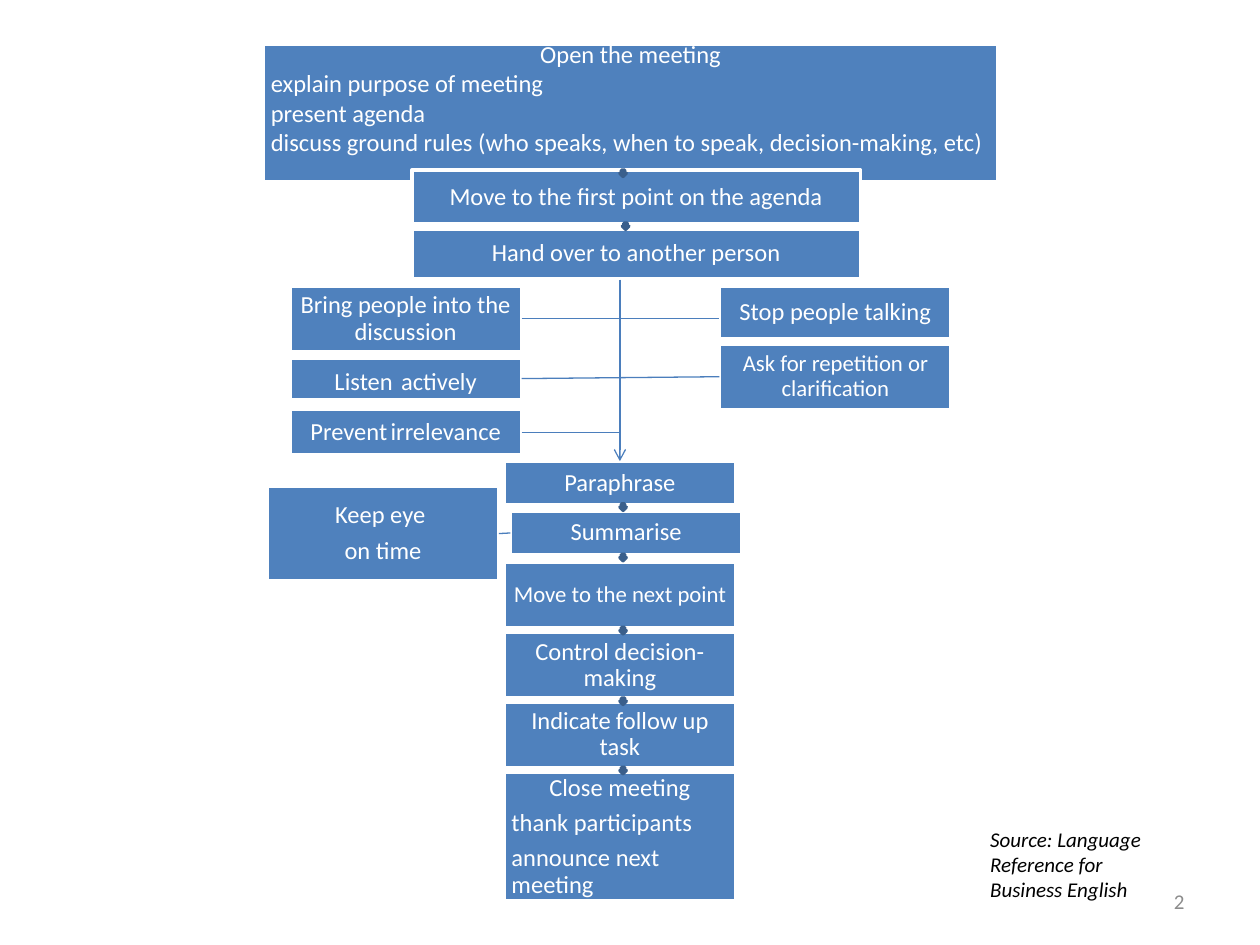
"""Build a slide with the flow of a business meeting."""
from lxml.etree import SubElement
from pptx import Presentation
from pptx.dml.color import RGBColor
from pptx.enum.shapes import MSO_CONNECTOR, MSO_SHAPE
from pptx.enum.text import MSO_ANCHOR, PP_ALIGN
from pptx.oxml.ns import qn
from pptx.util import Inches, Pt

BLUE = RGBColor(0x4F, 0x81, 0xBD)
LINK = RGBColor(0x4B, 0x7E, 0xBC)
EDGE = RGBColor(0x3A, 0x5F, 0x8C)
WHITE = RGBColor(0xFF, 0xFF, 0xFF)
BLACK = RGBColor(0, 0, 0)
GREY = RGBColor(0x8C, 0x8C, 0x8C)

COLS = {
    "top": (2.09, 5.83), "wide": (3.27, 3.56), "left": (2.3, 1.84),
    "right": (5.71, 1.84), "time": (2.12, 1.84), "mid": (4, 1.84),
    "sum": (4.05, 1.84),
}
BOXES = [
    ("open", "top", 0.35, 1.09, [
        "Open the meeting", "explain purpose of meeting", "present agenda",
        "discuss ground rules (who speaks, when to speak, decision-making, etc)"]),
    ("bring", "left", 2.27, 0.52, ["Bring people into the discussion"]),
    ("listen", "left", 2.84, 0.33, ["Listen actively"]),
    ("first", "wide", 1.35, 0.43, ["Move to the first point on the agenda"]),
    ("control", "mid", 5.02, 0.52, ["Control decision-making"]),
    ("time", "time", 3.86, 0.75, ["Keep eye ", "on time"]),
    ("sum", "sum", 4.06, 0.34, ["Summarise"]),
    ("ask", "right", 2.73, 0.52, ["Ask for repetition or clarification"]),
    ("prevent", "left", 3.25, 0.36, ["Prevent irrelevance"]),
    ("next", "mid", 4.46, 0.52, ["Move to the next point"]),
    ("para", "mid", 3.66, 0.35, ["Paraphrase"]),
    ("close", "mid", 6.13, 1.02, [
        "Close meeting", "thank participants", "announce next meeting"]),
    ("follow", "mid", 5.57, 0.52, ["Indicate follow up task"]),
    ("stop", "right", 2.27, 0.42, ["Stop people talking"]),
    ("hand", "wide", 1.82, 0.39, ["Hand over to another person"]),
]
SIZES = {"ask": 13, "next": 13}
GAPS = {"listen": 21, "prevent": 8, "follow": 13}
LISTS = ("open", "close")
LINKS = [
    ("bring", None, (4.14, 2.53), (5.71, 2.53)),
    ("listen", "ask", (4.14, 3.01), (5.71, 2.99)),
    ("prevent", None, (4.14, 3.43), (4.92, 3.43)),
    ("time", "sum", (3.96, 4.23), (4.05, 4.23)),
]
MARKS = [(4.92, 4), (4.92, 4.4), (4.92, 4.98), (4.92, 5.54),
         (4.92, 6.09), (4.92, 1.35), (4.94, 1.77)]


def style(run, size, color):
    run.font.name = "Calibri"
    run.font.size = Pt(size)
    run.font.color.rgb = color


def shape(kind, area, line):
    item = slide.shapes.add_shape(kind, *map(Inches, area))
    item.shadow.inherit = False
    item.fill.solid()
    item.fill.fore_color.rgb = BLUE
    item.line.color.rgb = line
    item.line.width = Pt(2)
    return item


def box(name, col, top, high, lines):
    left, wide = COLS[col]
    item = shape(MSO_SHAPE.RECTANGLE, (left, top, wide, high), WHITE)
    size = SIZES.get(name, 14)
    frame = item.text_frame
    frame.word_wrap = True
    frame.vertical_anchor = MSO_ANCHOR.MIDDLE
    frame.margin_left = frame.margin_right = Inches(0.06)
    frame.margin_top = frame.margin_bottom = Inches(0.06)
    if name == "open":
        frame.margin_bottom = Inches(0.3)
    frame.text = "\n".join(lines)
    for row, para in enumerate(frame.paragraphs):
        listed = name in LISTS and row > 0
        para.alignment = PP_ALIGN.LEFT if listed else PP_ALIGN.CENTER
        if name != "open":
            para.line_spacing = 0.9
            para.space_after = Pt(5)
        if name in GAPS:
            words = para.text.split()
            para.text = words[0]
            for word in words[1:]:
                para.add_run().text = " "
                para.add_run().text = word
        for run in para.runs:
            style(run, size if run.text.strip() else GAPS[name], WHITE)
    return item


def link(start, end):
    item = slide.shapes.add_connector(
        MSO_CONNECTOR.STRAIGHT, *map(Inches, start + end))
    item.line.color.rgb = LINK
    item.line.width = Pt(0.75)
    SubElement(item._element.spPr, qn("a:effectLst"))
    return item


def label(text, area, size, color):
    frame = slide.shapes.add_textbox(*map(Inches, area)).text_frame
    frame.word_wrap = True
    frame.text = text
    style(frame.paragraphs[0].runs[0], size, color)
    return frame


deck = Presentation()
deck.slide_width, deck.slide_height = Inches(10), Inches(7.5)
slide = deck.slides.add_slide(deck.slide_layouts[6])

nodes = {data[0]: box(*data) for data in BOXES}

for head, tail, start, end in LINKS:
    wire = link(start, end)
    wire.begin_connect(nodes[head], 3)
    if tail:
        wire.end_connect(nodes[tail], 1)

for left, top in MARKS:
    shape(MSO_SHAPE.DOWN_ARROW, (left, top, 0.05, 0.05), EDGE)

flow = link((4.92, 2.22), (4.93, 3.66))
flow.end_connect(nodes["para"], 0)
SubElement(flow.line._get_or_add_ln(), qn("a:tailEnd"), type="arrow")

note = label("Source: Language Reference for Business English",
             (7.76, 6.51, 1.65, 0.71), 12, BLACK)
note.paragraphs[0].runs[0].font.italic = True

page = label("2", (7.17, 6.95, 2.33, 0.4), 12, GREY)
page.vertical_anchor = MSO_ANCHOR.MIDDLE
page.paragraphs[0].alignment = PP_ALIGN.RIGHT

deck.save("out.pptx")
